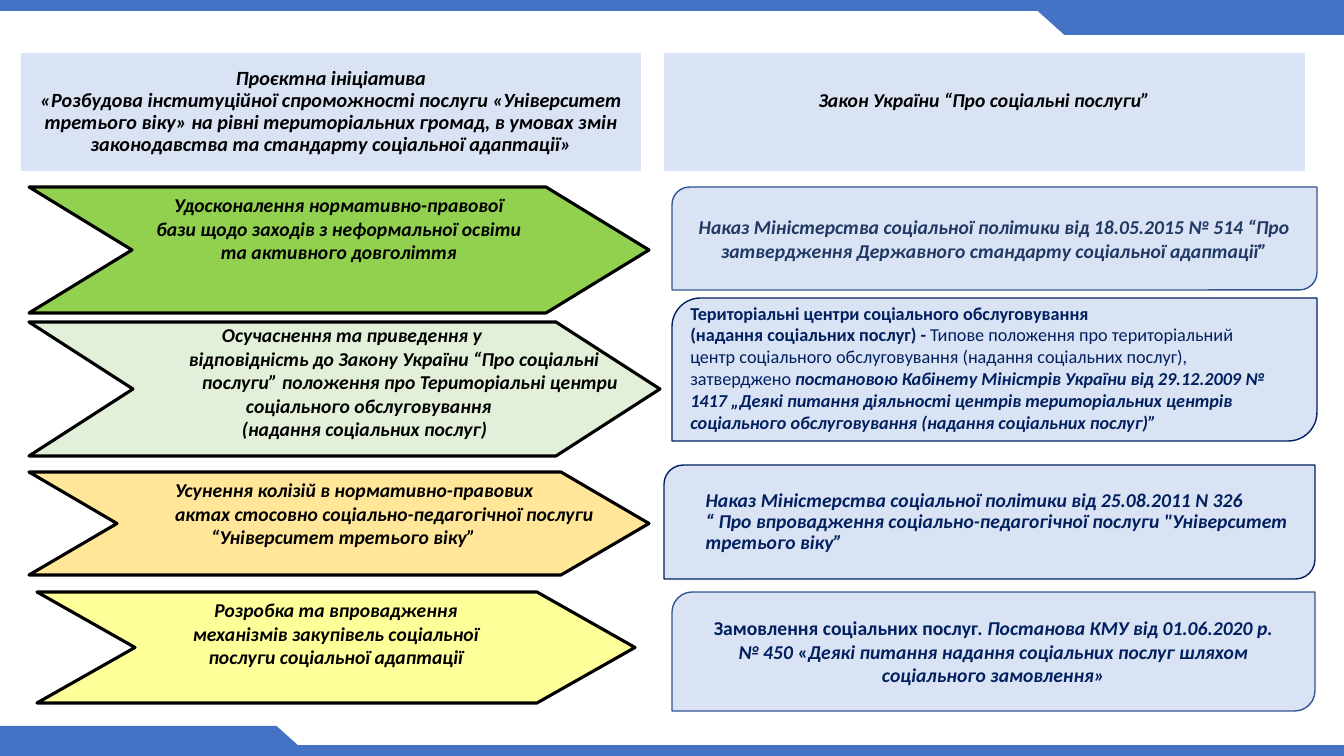
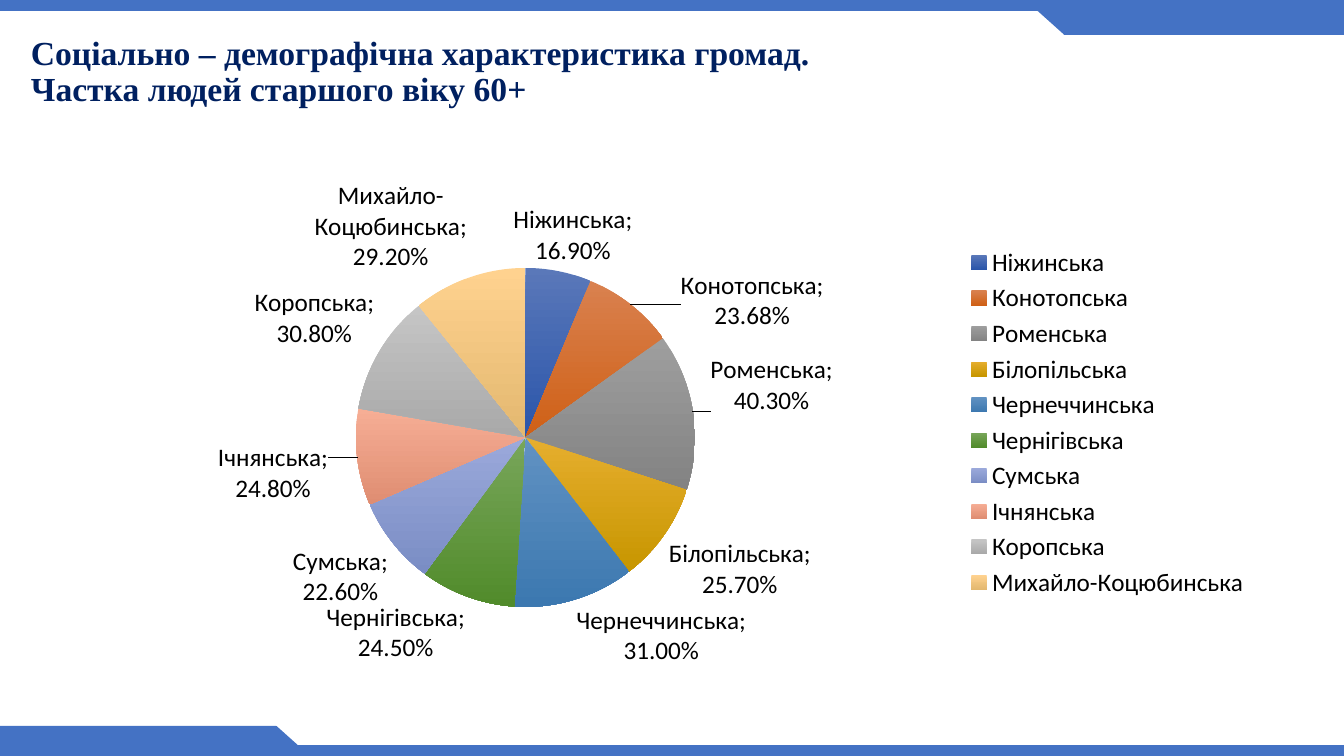
from copy import deepcopy

from lxml import etree
from pptx import Presentation
from pptx.chart.data import CategoryChartData
from pptx.dml.color import RGBColor
from pptx.enum import chart as charts, shapes, text
from pptx.oxml.ns import qn
from pptx.util import Emu, Pt

PX = 914400 / 100.8
PAGE_W, PAGE_H = 1344, 756
BLUE = RGBColor(0x44, 0x72, 0xC4)
PALE = RGBColor(0xDA, 0xE3, 0xF3)
NAVY = RGBColor(0x00, 0x20, 0x60)
SLATE = RGBColor(0x20, 0x38, 0x64)
EDGE = RGBColor(0x32, 0x54, 0x91)
BLACK = RGBColor(0, 0, 0)
GREEN = RGBColor(0x92, 0xD0, 0x50)
MINT = RGBColor(0xE2, 0xF0, 0xD9)
SAND = RGBColor(0xFF, 0xE6, 0x99)
YELLOW = RGBColor(0xFF, 0xFF, 0x99)
BODY, HEADING = "Calibri", "Times New Roman"
LEFT, CENTER = text.PP_ALIGN.LEFT, text.PP_ALIGN.CENTER
MIDDLE = text.MSO_ANCHOR.MIDDLE
BOLD_ITALIC = dict(bold=True, italic=True)

# community, share of people aged 60+, top and bottom colour of its slice
COMMUNITIES = [
    ("Ніжинська", 0.169, "5A78B9", "2A55AA"),
    ("Конотопська", 0.2368, "D9814F", "CF6016"),
    ("Роменська", 0.403, "9E9E9E", "838383"),
    ("Білопільська", 0.257, "E6AE2E", "C79600"),
    ("Чернеччинська", 0.31, "6192C2", "3C78B0"),
    ("Чернігівська", 0.245, "78A65A", "518B2B"),
    ("Сумська", 0.226, "9BA9DB", "7A8DC4"),
    ("Ічнянська", 0.248, "F6AE95", "DF8D72"),
    ("Коропська", 0.308, "C5C5C5", "A9A9A9"),
    ("Михайло-Коцюбинська", 0.292, "FFD28F", "E3B870"),
]
# offsets of single labels, in fractions of the chart's box
LABEL_SHIFTS = {0: (-0.04, 0), 1: (0.04, 0.06), 2: (0.01, 0.01), 7: (-0.02, -0.03)}

# box, depth of notch and point, fill, top inset, (line, left indent or None to centre)
ARROWS = [
    ((29, 187, 620, 126), 103, GREEN, 6, [
        ("Удосконалення нормативно-правової", None),
        ("бази щодо заходів з неформальної освіти", None),
        ("та активного довголіття", None)]),
    ((29, 322, 631, 134), 104, MINT, 1, [
        ("Осучаснення та приведення у", 193),
        ("відповідність до Закону України “Про соціальні", 160),
        ("послуги” положення про Територіальні центри", 173),
        ("соціального обслуговування", 217),
        ("(надання соціальних послуг)", 213)]),
    ((29, 472, 620, 103), 88, SAND, 6, [
        ("Усунення колізій в нормативно-правових", 146),
        ("актах стосовно соціально-педагогічної послуги", 146),
        ("“Університет третього віку”", 182)]),
    ((37, 592, 598, 111), 98, YELLOW, 6, [
        ("Розробка та впровадження", None),
        ("механізмів закупівель соціальної", None),
        ("послуги соціальної адаптації", None)]),
]

# box, corner, outline, bottom inset, paragraph format, spans
CARDS = [
    ((672, 187, 645, 103), 0.17, EDGE, 5, dict(alignment=CENTER), [
        ("Наказ Міністерства соціальної політики від 18.05.2015 № 514 “Про "
         "затвердження Державного стандарту соціальної адаптації”",
         dict(BOLD_ITALIC, size=Pt(14), color=SLATE))]),
    ((672, 298, 645, 143), 0.2, NAVY, 9, dict(alignment=LEFT), [
        ("Територіальні центри соціального обслуговування\v"
         "(надання соціальних послуг) - ", dict(bold=True, size=Pt(13), color=NAVY)),
        ("Типове положення про територіальний\vцентр соціального обслуговування "
         "(надання соціальних послуг),\vзатверджено ", dict(size=Pt(13), color=NAVY)),
        ("постановою Кабінету Міністрів України від 29.12.2009 №\v1417 „Деякі питання "
         "діяльності центрів територіальних центрів\vсоціального обслуговування "
         "(надання соціальних послуг)”",
         dict(BOLD_ITALIC, size=Pt(13), color=NAVY))]),
    ((664, 465, 651, 114), 0.17, NAVY, 5,
     dict(alignment=LEFT, line_spacing=0.9, indent=26), [
        ("Наказ Міністерства соціальної політики від 25.08.2011 N 326\v“ Про впровадження "
         "соціально-педагогічної послуги \"Університет\vтретього віку”",
         dict(BOLD_ITALIC, size=Pt(14), color=NAVY))]),
    ((672, 592, 643, 119), 0.17, EDGE, 5, dict(alignment=CENTER), [
        ("Замовлення соціальних послуг. ", dict(bold=True, size=Pt(14), color=NAVY)),
        ("Постанова КМУ від 01.06.2020 р.\v№ 450 ",
         dict(BOLD_ITALIC, size=Pt(14), color=NAVY)),
        ("«", dict(bold=True, size=Pt(14), color=NAVY)),
        ("Деякі питання надання соціальних послуг шляхом\vсоціального замовлення»",
         dict(BOLD_ITALIC, size=Pt(14), color=NAVY))]),
]


def px(value):
    return Emu(round(value * PX))


def set_all(target, values):
    for name, value in values.items():
        setattr(target, name, value)


def paint(shape, fill, line=None, width=1):
    shape.shadow.inherit = False
    shape.fill.solid()
    shape.fill.fore_color.rgb = fill
    if line is None:
        shape.line.fill.background()
    else:
        shape.line.color.rgb = line
        shape.line.width = Pt(width)


def add_preset(page, kind, box, fill, line=None):
    shape = page.shapes.add_shape(kind, *map(px, box))
    paint(shape, fill, line)
    return shape


def write(para, spans, indent=0, **layout):
    """Fill a paragraph with (words, font values) spans."""
    if indent:
        para._p.get_or_add_pPr().set("marL", str(px(indent)))
    set_all(para, layout)
    for words, values in spans:
        for number, piece in enumerate(words.split("\v")):
            if number:
                para.add_line_break()
            span = para.add_run()
            span.text = piece
            font = dict(name=BODY, bold=False, italic=False)
            font.update(values)
            span.font.color.rgb = font.pop("color")
            set_all(span.font, font)


def add_bands(page):
    """Draw the blue edges with a slanted tab at top right and bottom left."""
    rectangle, wedge = shapes.MSO_SHAPE.RECTANGLE, shapes.MSO_SHAPE.FLOWCHART_MERGE
    edge, tab = 11, 30
    for top in (0, PAGE_H - edge):
        add_preset(page, rectangle, (0, top, PAGE_W, edge), BLUE)
    add_preset(page, rectangle, (1064, 5, 280, tab), BLUE)
    add_preset(page, wedge, (1031, 5, 67, tab), BLUE)
    add_preset(page, rectangle, (0, PAGE_H - tab, 276, tab), BLUE)
    add_preset(page, wedge, (243, PAGE_H - tab, 67, tab), BLUE).rotation = 180


def add_heading(page, box, words, size, bottom=5):
    shape = add_preset(page, shapes.MSO_SHAPE.RECTANGLE, box, PALE)
    set_all(shape.text_frame, dict(word_wrap=True, vertical_anchor=MIDDLE,
                                   margin_bottom=px(bottom)))
    write(shape.text_frame.paragraphs[0],
          [(words, dict(BOLD_ITALIC, size=Pt(size), color=BLACK))],
          alignment=CENTER, line_spacing=0.9)


def add_arrow(page, box, depth, fill, inset, lines):
    left, top, width, height = box
    right, middle, bottom = left + width, top + height / 2, top + height
    outline = page.shapes.build_freeform(px(left), px(top))
    outline.add_line_segments([(px(x), px(y)) for x, y in (
        (right - depth, top), (right, middle), (right - depth, bottom),
        (left, bottom), (left + depth, middle))], close=True)
    shape = outline.convert_to_shape()
    paint(shape, fill, BLACK, 2.25)
    frame = shape.text_frame
    set_all(frame, dict(word_wrap=True, vertical_anchor=text.MSO_ANCHOR.TOP,
                        margin_left=0, margin_right=0, margin_bottom=0,
                        margin_top=px(inset)))
    for number, (words, indent) in enumerate(lines):
        para = frame.add_paragraph() if number else frame.paragraphs[0]
        write(para, [(words, dict(BOLD_ITALIC, size=Pt(14), color=BLACK))],
              indent or 0, alignment=CENTER if indent is None else LEFT)


def add_card(page, box, corner, line, bottom, layout, spans):
    shape = add_preset(page, shapes.MSO_SHAPE.ROUND_2_DIAG_RECTANGLE, box, PALE, line)
    shape.adjustments[0] = corner
    set_all(shape.text_frame, dict(word_wrap=True, vertical_anchor=MIDDLE,
                                   margin_bottom=px(bottom)))
    write(shape.text_frame.paragraphs[0], spans, **layout)


def add_title(page, box, words):
    frame = page.shapes.add_textbox(*map(px, box)).text_frame
    set_all(frame, dict(word_wrap=True, vertical_anchor=MIDDLE))
    write(frame.paragraphs[0],
          [(words, dict(name=HEADING, bold=True, size=Pt(24), color=NAVY))],
          line_spacing=0.9)


def arrange_labels(labels):
    """Put each value under its name and move the labels that have a shift."""
    common = labels._element
    separator = etree.Element(qn("c:separator"))
    separator.text = ";\n"
    common.find(qn("c:showBubbleSize")).addnext(separator)
    shared = [part for part in common if part.tag != qn("c:showLeaderLines")]
    for place, (index, offset) in enumerate(LABEL_SHIFTS.items()):
        label = etree.Element(qn("c:dLbl"))
        etree.SubElement(label, qn("c:idx")).set("val", str(index))
        layout = etree.SubElement(label, qn("c:layout"))
        manual = etree.SubElement(layout, qn("c:manualLayout"))
        for axis, value in zip("xy", offset):
            etree.SubElement(manual, qn("c:" + axis)).set("val", str(value))
        label.extend([deepcopy(part) for part in shared])
        common.insert(place, label)


def place_plot(chart, box, plot_box):
    """Fix the inner plot area, given like the chart's box in px of the page."""
    left, top, width, height = box
    x, y, w, h = plot_box
    area = chart._chartSpace.find(".//" + qn("c:plotArea"))
    for old in area.findall(qn("c:layout")):
        area.remove(old)
    layout = etree.Element(qn("c:layout"))
    area.insert(0, layout)
    manual = etree.SubElement(layout, qn("c:manualLayout"))
    settings = dict(layoutTarget="inner", xMode="edge", yMode="edge",
                    x=(x - left) / width, y=(y - top) / height,
                    w=w / width, h=h / height)
    for name, value in settings.items():
        etree.SubElement(manual, qn("c:" + name)).set("val", str(value))


def add_pie(page, box, plot_box):
    data = CategoryChartData(number_format="0.00%")
    data.categories = [name for name, *_ in COMMUNITIES]
    data.add_series("Series 1", [share for _, share, *_ in COMMUNITIES])
    chart = page.shapes.add_chart(charts.XL_CHART_TYPE.PIE, *map(px, box), data).chart
    chart.has_title = False
    chart.has_legend = True
    set_all(chart.legend, dict(position=charts.XL_LEGEND_POSITION.RIGHT,
                               include_in_layout=False))
    plot = chart.plots[0]
    plot.vary_by_categories = True
    series = plot.series[0]
    for index, (_, _, *colors) in enumerate(COMMUNITIES):
        fill = series.points[index].format.fill
        fill.gradient()
        fill.gradient_angle = 270
        for stop, color in zip(fill.gradient_stops, colors):
            stop.color.rgb = RGBColor.from_string(color)
    labels = series.data_labels
    set_all(labels, dict(show_value=True, show_category_name=True, show_percentage=False,
                         number_format="0.00%", number_format_is_linked=False,
                         position=charts.XL_LABEL_POSITION.OUTSIDE_END))
    for font in (chart.font, chart.legend.font, labels.font):
        set_all(font, dict(name=BODY, size=Pt(18)))
        font.color.rgb = BLACK
    arrange_labels(labels)
    place_plot(chart, box, plot_box)


def add_law_page(page):
    add_heading(page, (21, 53, 620, 118),
                "Проєктна ініціатива\v«Розбудова інституційної спроможності послуги "
                "«Університет третього віку» на рівні територіальних громад, в умовах "
                "змін законодавства та стандарту соціальної адаптації»", 14.4)
    add_heading(page, (664, 53, 641, 118), "Закон України “Про соціальні послуги”", 14, 27)
    for arrow in ARROWS:
        add_arrow(page, *arrow)
    for card in CARDS:
        add_card(page, *card)


def add_share_page(page):
    add_title(page, (21, 21, 1138, 103), "Соціально – демографічна характеристика громад.\v"
                                         "Частка людей старшого віку 60+")
    add_pie(page, (101, 163, 1159, 519), (356, 268, 339, 339))


def main():
    deck = Presentation()
    set_all(deck, dict(slide_width=px(PAGE_W), slide_height=px(PAGE_H)))
    for fill_page in (add_law_page, add_share_page):
        page = deck.slides.add_slide(deck.slide_layouts[6])
        add_bands(page)
        fill_page(page)
    deck.save("out.pptx")


if __name__ == "__main__":
    main()
